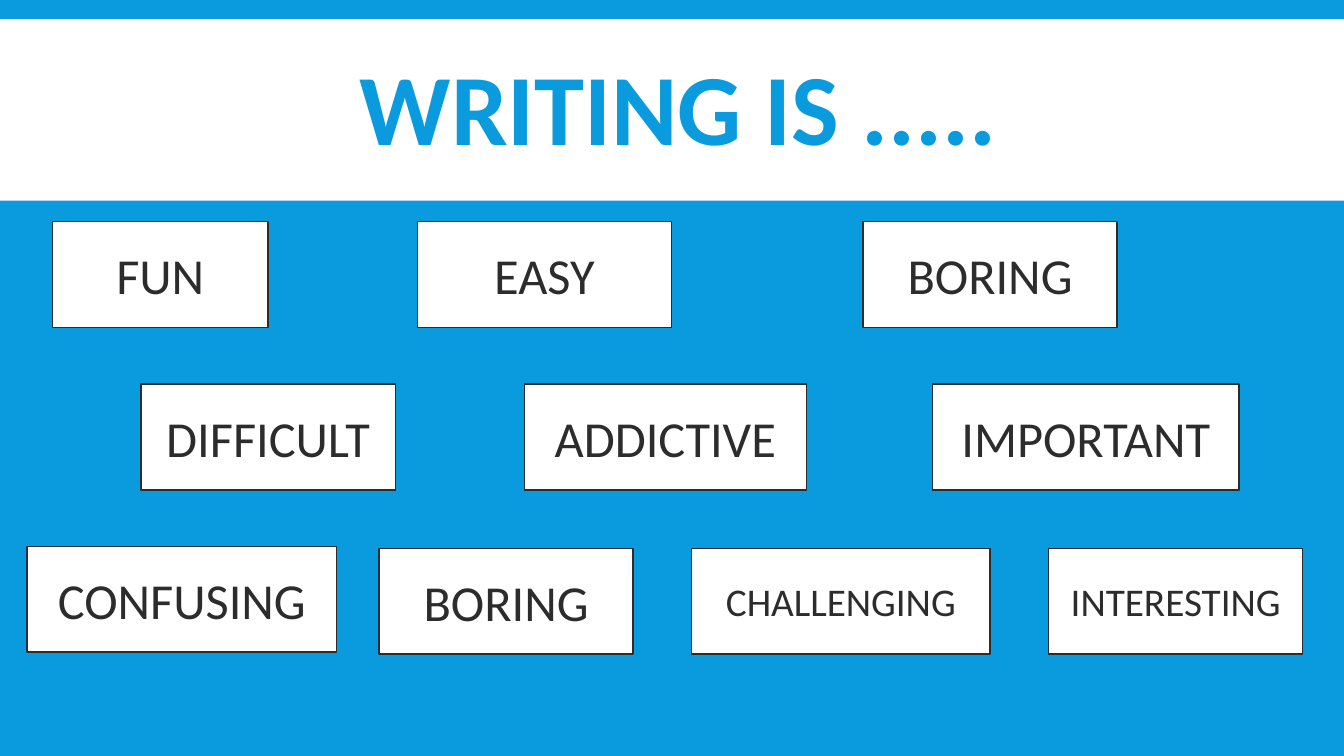
from dataclasses import dataclass

from pptx import Presentation
from pptx.dml.color import RGBColor
from pptx.enum.shapes import MSO_SHAPE
from pptx.enum.text import MSO_ANCHOR, PP_ALIGN
from pptx.util import Inches, Pt

RECTANGLE = MSO_SHAPE.RECTANGLE
MIDDLE = MSO_ANCHOR.MIDDLE
CENTER = PP_ALIGN.CENTER


@dataclass(frozen=True)
class Theme:
    font: str = "Calibri"
    blue: RGBColor = RGBColor(0x09, 0x9B, 0xDD)
    white: RGBColor = RGBColor(0xFF, 0xFF, 0xFF)
    dark: RGBColor = RGBColor(0x2C, 0x2C, 0x2C)
    title_size: int = 72
    word_size: int = 36
    long_word_size: int = 28
    outline_width: int = 1


def write_text(shape, text, *, font, size, color, bold=False, line_spacing=1.0):
    frame = shape.text_frame
    frame.word_wrap = True
    frame.vertical_anchor = MIDDLE
    paragraph = frame.paragraphs[0]
    paragraph.alignment = CENTER
    paragraph.line_spacing = line_spacing
    run = paragraph.add_run()
    run.text = text
    run.font.name = font
    run.font.size = Pt(size)
    run.font.bold = bold
    run.font.color.rgb = color


class SlideBuilder:
    def __init__(self, slide, theme):
        self.slide = slide
        self.theme = theme

    def background(self):
        fill = self.slide.background.fill
        fill.solid()
        fill.fore_color.rgb = self.theme.blue

    def rectangle(self, left, top, width, height):
        shape = self.slide.shapes.add_shape(
            RECTANGLE, Inches(left), Inches(top), Inches(width), Inches(height)
        )
        shape.shadow.inherit = False
        shape.fill.solid()
        shape.fill.fore_color.rgb = self.theme.white
        shape.line.fill.background()
        return shape

    def title(self, text, left, top, width, height):
        box = self.slide.shapes.add_textbox(
            Inches(left), Inches(top), Inches(width), Inches(height)
        )
        write_text(
            box, text, font=self.theme.font, size=self.theme.title_size,
            color=self.theme.blue, bold=True, line_spacing=0.85,
        )

    def word_card(self, text, left, top, width, height, size):
        card = self.rectangle(left, top, width, height)
        card.line.color.rgb = self.theme.dark
        card.line.width = Pt(self.theme.outline_width)
        write_text(card, text, font=self.theme.font, size=size, color=self.theme.dark)


def main():
    slide_width = 13.33
    card_height = 1.05
    card_width = 2.52
    theme = Theme()
    regular, small = theme.word_size, theme.long_word_size
    first_row, second_row, third_row = 2.2, 3.81, 5.44
    word_cards = [
        ("FUN", 0.52, first_row, 2.14, regular),
        ("EASY", 4.14, first_row, card_width, regular),
        ("BORING", 8.56, first_row, card_width, regular),
        ("DIFFICULT", 1.4, second_row, card_width, regular),
        ("ADDICTIVE", 5.2, second_row, 2.8, regular),
        ("IMPORTANT", 9.25, second_row, 3.04, regular),
        ("CONFUSING", 0.27, 5.42, 3.07, regular),
        ("BORING", 3.76, third_row, card_width, regular),
        ("CHALLENGING", 6.86, third_row, 2.96, small),
        ("INTERESTING", 10.4, third_row, card_width, small),
    ]

    presentation = Presentation()
    presentation.slide_width = Inches(slide_width)
    presentation.slide_height = Inches(7.5)
    slide = presentation.slides.add_slide(presentation.slide_layouts[6])

    builder = SlideBuilder(slide, theme)
    builder.background()
    builder.rectangle(0, 0.19, slide_width, 1.8)
    builder.title("WRITING IS .....", 1.38, 0.31, 10.7, 1.65)
    for text, left, top, width, size in word_cards:
        builder.word_card(text, left, top, width, card_height, size)

    presentation.save("out.pptx")


if __name__ == "__main__":
    main()
